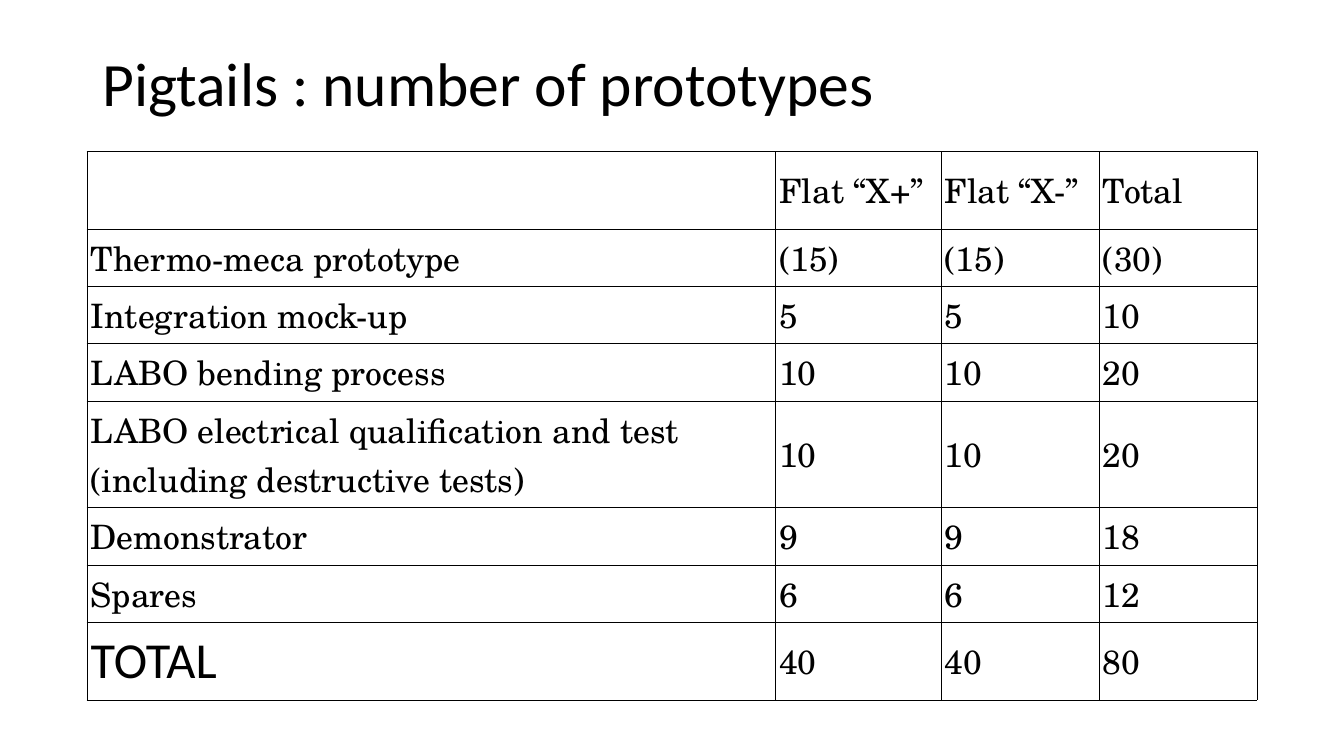
from lxml import etree
from pptx import Presentation
from pptx.dml.color import RGBColor
from pptx.enum.text import MSO_ANCHOR
from pptx.oxml.ns import qn
from pptx.util import Inches, Pt

MIDDLE = MSO_ANCHOR.MIDDLE
BLACK = "000000"
TITLE_FONT = "Calibri"
TABLE_FONT = "TeX Gyre Schola"

COLUMN_WIDTHS = [6.83, 1.64, 1.57, 1.57]
ROW_HEIGHTS = [0.77, 0.57, 0.57, 0.57, 0.98, 0.57, 0.57, 0.77]
PROTOTYPES = [
    ["", "Flat “X+”", "Flat “X-”", "Total"],
    ["Thermo-meca prototype", "(15)", "(15)", "(30)"],
    ["Integration mock-up", "5", "5", "10"],
    ["LABO bending process", "10", "10", "20"],
    ["LABO electrical qualification and test (including destructive tests)",
     "10", "10", "20"],
    ["Demonstrator", "9", "9", "18"],
    ["Spares", "6", "6", "12"],
    ["TOTAL\u00a0", "40", "40", "80"],
]


def color(hex_code):
    return RGBColor.from_string(hex_code)


def format_text(tf, font, size):
    for p in tf.paragraphs:
        for r in p.runs:
            r.font.name = font
            r.font.size = Pt(size)
            r.font.color.rgb = color(BLACK)


def add_title(s, text):
    sp = s.shapes.add_textbox(Inches(0.92), Inches(0.4), Inches(11.5), Inches(0.92))
    tf = sp.text_frame
    tf.word_wrap = True
    tf.vertical_anchor = MIDDLE
    tf.text = text
    tf.paragraphs[0].line_spacing = 0.9
    format_text(tf, TITLE_FONT, 44)


def set_borders(cell, hex_code, width):
    props = cell._tc.get_or_add_tcPr()
    # Borders come before the fill in the cell properties
    for i, side in enumerate(("a:lnL", "a:lnR", "a:lnT", "a:lnB")):
        line = etree.Element(qn(side), w=str(Pt(width)))
        fill = etree.SubElement(line, qn("a:solidFill"))
        etree.SubElement(fill, qn("a:srgbClr"), val=hex_code)
        props.insert(i, line)


def fill_cell(cell, text, font, size):
    cell.margin_left = cell.margin_right = Inches(0.04)
    cell.margin_top = cell.margin_bottom = Inches(0.04)
    cell.vertical_anchor = MIDDLE
    cell.fill.background()
    set_borders(cell, BLACK, 0.25)
    cell.text_frame.text = text
    format_text(cell.text_frame, font, size)


def add_prototype_table(s):
    frame = s.shapes.add_table(
        len(PROTOTYPES), len(COLUMN_WIDTHS), Inches(0.86), Inches(1.5),
        Inches(sum(COLUMN_WIDTHS)), Inches(sum(ROW_HEIGHTS)))
    table = frame.table
    table.first_row = table.horz_banding = False
    for column, width in zip(table.columns, COLUMN_WIDTHS):
        column.width = Inches(width)
    for row, height, texts in zip(table.rows, ROW_HEIGHTS, PROTOTYPES):
        row.height = Inches(height)
        for cell, text in zip(row.cells, texts):
            fill_cell(cell, text, TABLE_FONT, 24)
    # The label of the last row is larger
    format_text(table.cell(len(PROTOTYPES) - 1, 0).text_frame, TITLE_FONT, 36)


def main():
    prs = Presentation()
    prs.slide_width = Inches(13.33)
    prs.slide_height = Inches(7.5)
    s = prs.slides.add_slide(prs.slide_layouts[6])
    add_prototype_table(s)
    add_title(s, "Pigtails : number of prototypes")
    prs.save("out.pptx")


if __name__ == "__main__":
    main()
